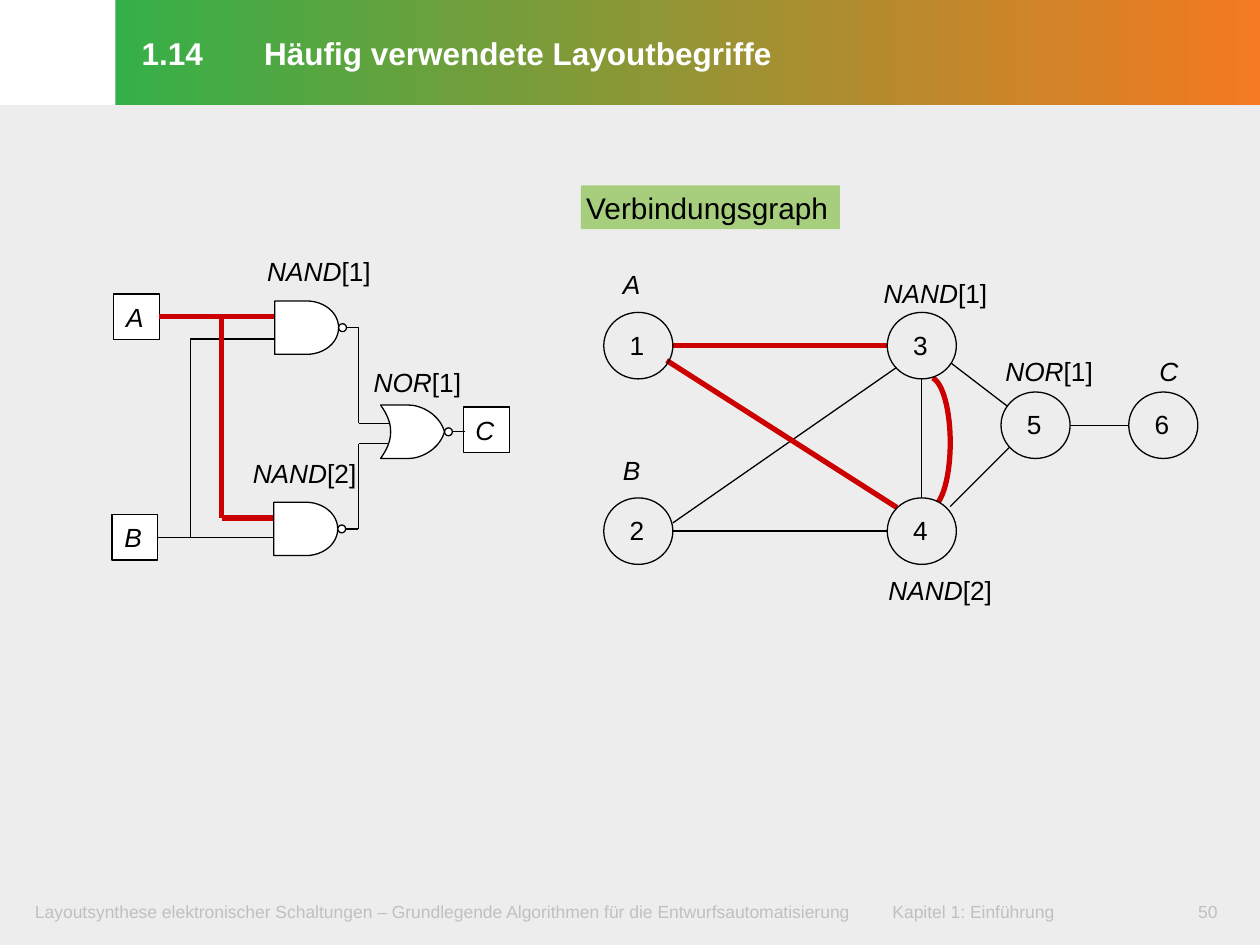
from lxml.etree import SubElement
from pptx import Presentation
from pptx.dml.color import RGBColor
from pptx.enum.shapes import MSO_CONNECTOR as CONN, MSO_SHAPE as SHAPE
from pptx.enum.text import MSO_ANCHOR as ANCHOR, MSO_AUTO_SIZE as AUTO, PP_ALIGN as ALIGN
from pptx.oxml.ns import qn
from pptx.util import Pt

BLACK, WHITE, GREY, RED = "000000", "FFFFFF", "EDEDED", "CC0000"
GREEN, ORANGE, LIME, SILVER = "35B048", "F47920", "A7CE7C", "C0C0C0"
GATE_W, GATE_H, BUBBLE = 36.5, 30.5, 4.5
NODE_W, NODE_H, PAD = 39.5, 38, 26


def rgb(value):
    return RGBColor.from_string(value)


def write(sp, text, size=15, color=BLACK, bold=False, italic=False, tail="",
          align=ALIGN.LEFT, anchor=ANCHOR.TOP, insets=(0, 0, 0, 0), tab=None, leading=None):
    tf = sp.text_frame
    tf.word_wrap = True
    tf.auto_size = AUTO.NONE
    tf.vertical_anchor = anchor
    tf.margin_left, tf.margin_top, tf.margin_right, tf.margin_bottom = map(Pt, insets)
    p = tf.paragraphs[0]
    p.alignment = align
    if leading:
        p.line_spacing = Pt(leading)
    if tab:
        tabs = SubElement(p._p.get_or_add_pPr(), qn("a:tabLst"))
        SubElement(tabs, qn("a:tab"), pos=str(Pt(tab)), algn="l")
    for part, slanted in ((text, italic), (tail, False)):
        if part:
            r = p.add_run()
            r.text = part
            r.font.name, r.font.size = "Arial", Pt(size)
            r.font.bold, r.font.italic = bold, slanted
            r.font.color.rgb = rgb(color)


def style(sp, fill=None, line=None, width=0.75):
    sp.shadow.inherit = False
    if fill:
        sp.fill.solid()
        sp.fill.fore_color.rgb = rgb(fill)
    else:
        sp.fill.background()
    if line:
        sp.line.color.rgb = rgb(line)
        sp.line.width = Pt(width)
    else:
        sp.line.fill.background()
    return sp


def add_box(slide, kind, x, y, w, h, fill=None, line=None):
    return style(slide.shapes.add_shape(kind, Pt(x), Pt(y), Pt(w), Pt(h)), fill, line)


def add_text(slide, x, y, w, h, text, **fmt):
    write(slide.shapes.add_textbox(Pt(x), Pt(y), Pt(w), Pt(h)), text, **fmt)


def add_label(slide, x, y, name, index=""):
    add_text(slide, x, y, 80, 25, name, tail=index, italic=True, insets=(8, 3.5, 8, 3.5))


def add_line(slide, x1, y1, x2, y2, color=BLACK, width=0.75):
    ln = slide.shapes.add_connector(CONN.STRAIGHT, Pt(x1), Pt(y1), Pt(x2), Pt(y2))
    ln.line.color.rgb = rgb(color)
    ln.line.width = Pt(width)
    SubElement(ln._element.spPr, qn("a:effectLst"))
    return ln


def bezier(a, b, c, d, steps=16):
    for i in range(steps + 1):
        t = i / steps
        u = 1 - t
        yield tuple(u**3 * k + 3 * u * u * t * m + 3 * u * t * t * n + t**3 * o
                    for k, m, n, o in zip(a, b, c, d))


def add_curve(slide, x, y, curves, close=False):
    points = [(Pt(x + px), Pt(y + py)) for curve in curves for px, py in bezier(*curve)]
    builder = slide.shapes.build_freeform(*points[0])
    builder.add_line_segments(points[1:], close=close)
    return builder.convert_to_shape()


def add_header(slide, x, y, w, h):
    title = slide.shapes.title
    title.left, title.top, title.width, title.height = Pt(x), Pt(y), Pt(w), Pt(h)
    title.fill.gradient()
    title.fill.gradient_angle = 0
    for stop, color in zip(title.fill.gradient_stops, (GREEN, ORANGE)):
        stop.color.rgb = rgb(color)
    write(title, "1.14\tHäufig verwendete Layoutbegriffe", size=18, color=WHITE, bold=True,
          anchor=ANCHOR.MIDDLE, insets=(15, 3.5, 7, 5), tab=70, leading=23.5)


def add_footer(slide, x, y, w, h):
    fmt = dict(size=10, color=SILVER, insets=(8.5, 4.5, 8.5, 4.5))
    add_text(slide, x, y, 637, h, "Layoutsynthese elektronischer Schaltungen – Grundlegende "
             "Algorithmen für die Entwurfsautomatisierung\tKapitel 1: Einführung", tab=490, **fmt)
    add_text(slide, x + w - 42.5, y, 42.5, h, "50", align=ALIGN.CENTER, **fmt)


def add_caption(slide, x, y, w, h):
    sp = add_box(slide, SHAPE.RECTANGLE, x, y, w, h, LIME)
    write(sp, "Verbindungsgraph", size=17, anchor=ANCHOR.MIDDLE, insets=(3, 0, 0, 0))


def add_gate(slide, x, y, is_nor=False):
    mid = GATE_H / 2
    if is_nor:
        tip = (GATE_W, mid)
        outline = [((16, 0), (24, 0), (34, 6), tip),
                   (tip, (34, GATE_H - 6), (24, GATE_H), (16, GATE_H)),
                   ((0, GATE_H), (7.7, 20), (7.7, 10.5), (0, 0))]
        style(add_curve(slide, x, y, outline, close=True), WHITE, BLACK)
    else:
        add_box(slide, SHAPE.FLOWCHART_DELAY, x, y, GATE_W, GATE_H, WHITE, BLACK)
    add_line(slide, x + GATE_W + BUBBLE, y + mid, x + 48, y + mid)
    add_box(slide, SHAPE.OVAL, x + GATE_W, y + mid - BUBBLE / 2, BUBBLE, BUBBLE, WHITE, BLACK)


def add_circuit(slide, x, y):
    pads = {}
    for name, px, py in (("A", 1, 26), ("B", 0, 152), ("C", 201, 90.5)):
        sp = add_box(slide, SHAPE.RECTANGLE, x + px, y + py, PAD, PAD, WHITE, BLACK)
        write(sp, name, italic=True, align=ALIGN.CENTER, anchor=ANCHOR.MIDDLE, insets=(0, 0, 2, 0))
        pads[name] = sp
    for name, x1, wy, fmt in (("A", 27, 39, (RED, 3)), ("B", 26, 165, ())):
        add_line(slide, x + x1, y + wy, x + 93, y + wy, *fmt).begin_connect(pads[name], 3)
    for x1, y1, x2, y2 in ((44.7, 165, 44.7, 51.7), (44.7, 51.7, 93, 51.7),
                           (141, 45.25, 141, 100), (141, 100, 159, 100),
                           (141, 111.5, 141, 160.25), (141, 111.5, 159, 111.5)):
        add_line(slide, x + x1, y + y1, x + x2, y + y2)
    add_line(slide, x + 62.7, y + 39, x + 62.7, y + 154, RED, 3)
    add_line(slide, x + 62.7, y + 154, x + 93, y + 154, RED, 3)
    for gx, gy, is_nor in ((93, 30, False), (92.5, 145, False), (153.5, 89.5, True)):
        add_gate(slide, x + gx, y + gy, is_nor)
    for lx, ly, name, index in ((80.7, 0.5, "NAND", "[1]"), (72.5, 116, "NAND", "[2]"),
                                (141.5, 64, "NOR", "[1]")):
        add_label(slide, x + lx, y + ly, name, index)


def add_graph(slide, x, y):
    edges = [(39.5, 153.5, 162, 153.5), (266.5, 93, 300, 93), (39.5, 148.8, 167, 60.2),
             (181.75, 66.5, 181.75, 134.5), (198.5, 57.5, 234, 84.7), (198, 139.5, 234, 103.5)]
    for x1, y1, x2, y2 in edges:
        add_line(slide, x + x1, y + y1, x + x2, y + y2)
    for x1, y1, x2, y2 in ((39.5, 47.5, 162, 47.5), (36, 56, 167.5, 140)):
        add_line(slide, x + x1, y + y1, x + x2, y + y2, RED, 3)
    arc = [((188, 66), (194, 69), (198, 85), (198, 103)),
           ((198, 103), (198, 121), (194, 137), (188, 140))]
    style(add_curve(slide, x, y, arc), line=RED, width=3)
    nodes = [("1", 0, 28.5, None), ("2", 0, 134.5, None), ("3", 162, 28.5, None),
             ("4", 162, 134.5, GREY), ("5", 227, 74, GREY), ("6", 300, 74, None)]
    for number, nx, ny, fill in nodes:
        sp = add_box(slide, SHAPE.OVAL, x + nx, y + ny, NODE_W, NODE_H, fill, BLACK)
        write(sp, number, align=ALIGN.CENTER, anchor=ANCHOR.MIDDLE, insets=(0, 0, 1.5, 1))
    for lx, ly, name, index in ((3, 0, "A", ""), (3, 106, "B", ""), (152, 5, "NAND", "[1]"),
                                (154.7, 174.7, "NAND", "[2]"), (221.5, 49.5, "NOR", "[1]"),
                                (309.5, 49.5, "C", "")):
        add_label(slide, x + lx, y + ly, name, index)


def main():
    prs = Presentation()
    prs.slide_width, prs.slide_height = Pt(720), Pt(540)
    slide = prs.slides.add_slide(prs.slide_layouts[5])
    add_box(slide, SHAPE.RECTANGLE, 0, 60, 720, 480, GREY)
    add_header(slide, 66, 0, 654, 60)
    add_footer(slide, 11.5, 510.5, 700, 23)
    add_caption(slide, 332, 106, 148, 25)
    add_circuit(slide, 64, 142)
    add_graph(slide, 345, 150)
    prs.save("out.pptx")


if __name__ == "__main__":
    main()
